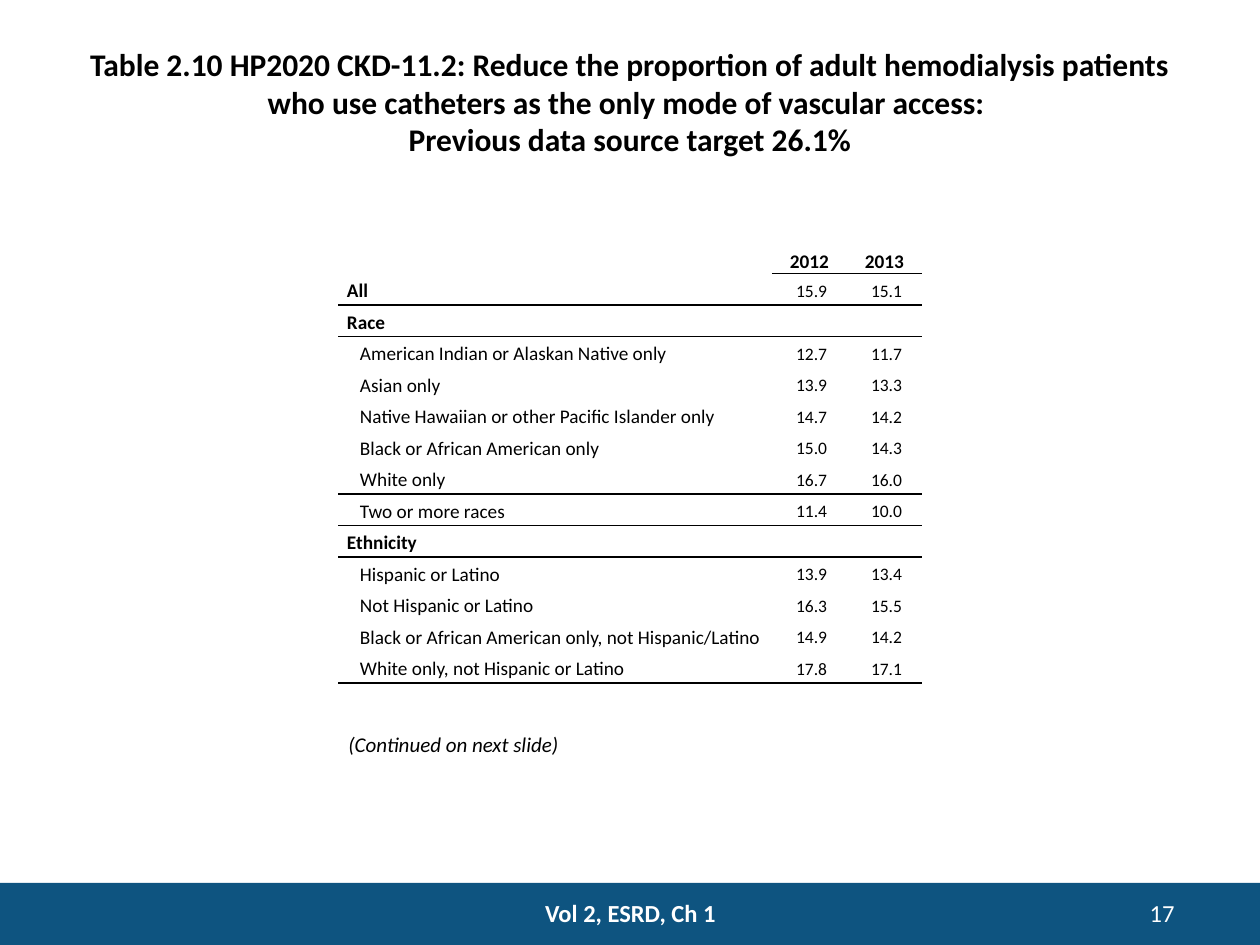
from lxml.etree import SubElement
from pptx import Presentation
from pptx.dml.color import RGBColor
from pptx.enum.shapes import MSO_SHAPE as Shape
from pptx.enum.text import MSO_ANCHOR as Anchor, PP_ALIGN as Align
from pptx.oxml.ns import qn
from pptx.util import Emu, Pt

PX = 914400 / 126
COLORS = {"black": "000000", "white": "FFFFFF", "footer": "0E5480"}
NO_STYLE = "{2D5ABB26-0587-4C30-8999-92F81FD0307C}"


def px(count):
    return Emu(round(count * PX))


def write(frame, text, size=11, color="black", bold=False, italic=False,
          align=Align.LEFT, anchor=Anchor.TOP, spacing=None, indent=0, margins=None):
    frame.word_wrap = True
    frame.vertical_anchor = anchor
    if margins:
        (frame.margin_left, frame.margin_top,
         frame.margin_right, frame.margin_bottom) = map(px, margins)
    for index, line in enumerate(text.split("\n")):
        paragraph = frame.paragraphs[0] if index == 0 else frame.add_paragraph()
        paragraph.alignment = align
        paragraph.line_spacing = spacing
        paragraph.space_before = Pt(0)
        if indent:
            paragraph._p.get_or_add_pPr().set("marL", str(px(indent)))
        run = paragraph.add_run()
        run.text = line
        run.font.name = "Calibri"
        run.font.size = Pt(size)
        run.font.bold = bold
        run.font.italic = italic
        run.font.color.rgb = RGBColor.from_string(COLORS[color])


presentation = Presentation()
presentation.slide_width, presentation.slide_height = px(1260), px(945)
slide = presentation.slides.add_slide(presentation.slide_layouts[5])

band = slide.shapes.add_shape(Shape.RECTANGLE, 0, px(883), px(1260), px(62))
band.shadow.inherit = False
band.fill.solid()
band.fill.fore_color.rgb = RGBColor.from_string(COLORS["footer"])
band.line.fill.background()

title = slide.shapes.title
title.left, title.top, title.width, title.height = map(px, (63, 38, 1134, 127))
write(title.text_frame,
      "Table 2.10 HP2020 CKD-11.2: Reduce the proportion of adult hemodialysis patients "
      "who use catheters as the only mode of vascular access: \n"
      "Previous data source target 26.1%",
      size=18, bold=True, align=Align.CENTER, anchor=Anchor.MIDDLE)

labels = [
    ((1061, 892, 126, 38), "17", dict(size=14, color="white", align=Align.RIGHT)),
    ((494, 892, 273, 42), "Vol 2, ESRD, Ch 1",
     dict(size=14, color="white", bold=True, align=Align.CENTER)),
    ((336, 725, 347, 38), "(Continued on next slide)", dict(size=12, italic=True)),
]
for place, text, style in labels:
    box = slide.shapes.add_textbox(*map(px, place))
    write(box.text_frame, text, **style)

rows = [
    ("", "2012", "2013"),
    ("All", "15.9", "15.1"),
    ("Race", "", ""),
    ("American Indian or Alaskan Native only", "12.7", "11.7"),
    ("Asian only", "13.9", "13.3"),
    ("Native Hawaiian or other Pacific Islander only", "14.7", "14.2"),
    ("Black or African American only", "15.0", "14.3"),
    ("White only", "16.7", "16.0"),
    ("Two or more races", "11.4", "10.0"),
    ("Ethnicity", "", ""),
    ("Hispanic or Latino", "13.9", "13.4"),
    ("Not Hispanic or Latino", "16.3", "15.5"),
    ("Black or African American only, not Hispanic/Latino", "14.9", "14.2"),
    ("White only, not Hispanic or Latino", "17.8", "17.1"),
]
headings = ("All", "Race", "Ethnicity")
ruled_rows = {0, 1, 7, 8, 13}
column_widths = (434, 75, 75)

frame = slide.shapes.add_table(len(rows), 3, px(338), px(242), px(584), px(441))
table = frame.table
table.first_row = table.horz_banding = False
table._tbl.tblPr.find(qn("a:tableStyleId")).text = NO_STYLE
for column, width in zip(table.columns, column_widths):
    column.width = px(width)

for row_index, values in enumerate(rows):
    for column_index, value in enumerate(values):
        cell = table.cell(row_index, column_index)
        if row_index == 0:
            style = dict(bold=True, align=Align.CENTER, anchor=Anchor.BOTTOM,
                         margins=(9, 0, 9, 0))
        elif column_index == 0:
            heading = value in headings
            style = dict(bold=heading, indent=0 if heading else 13,
                         anchor=Anchor.MIDDLE, margins=(9, 0, 9, 0))
        else:
            style = dict(size=10, align=Align.RIGHT, margins=(0, 4, 20, 0))
        anchor, margins = style.pop("anchor", Anchor.TOP), style.pop("margins")
        cell.vertical_anchor = anchor
        (cell.margin_left, cell.margin_top,
         cell.margin_right, cell.margin_bottom) = map(px, margins)
        if value:
            paragraph_frame = cell.text_frame
            paragraph = paragraph_frame.paragraphs[0]
            paragraph.alignment = style.get("align", Align.LEFT)
            paragraph.line_spacing = 1.15
            if style.get("indent"):
                paragraph._p.get_or_add_pPr().set("marL", str(px(style["indent"])))
            run = paragraph.add_run()
            run.text = value
            run.font.name = "Calibri"
            run.font.size = Pt(style.get("size", 11))
            run.font.bold = style.get("bold", False)
            run.font.color.rgb = RGBColor.from_string(COLORS["black"])
        else:
            SubElement(cell.text_frame.paragraphs[0]._p, qn("a:endParaRPr"), sz="1000")
        for edge, ruled_row in (("a:lnT", row_index - 1), ("a:lnB", row_index)):
            if ruled_row in ruled_rows and (ruled_row, column_index) != (0, 0):
                line = SubElement(cell._tc.get_or_add_tcPr(), qn(edge), w=str(Pt(1)))
                fill = SubElement(line, qn("a:solidFill"))
                SubElement(fill, qn("a:srgbClr"), val=COLORS["black"])
        cell.fill.background()

presentation.save("out.pptx")
